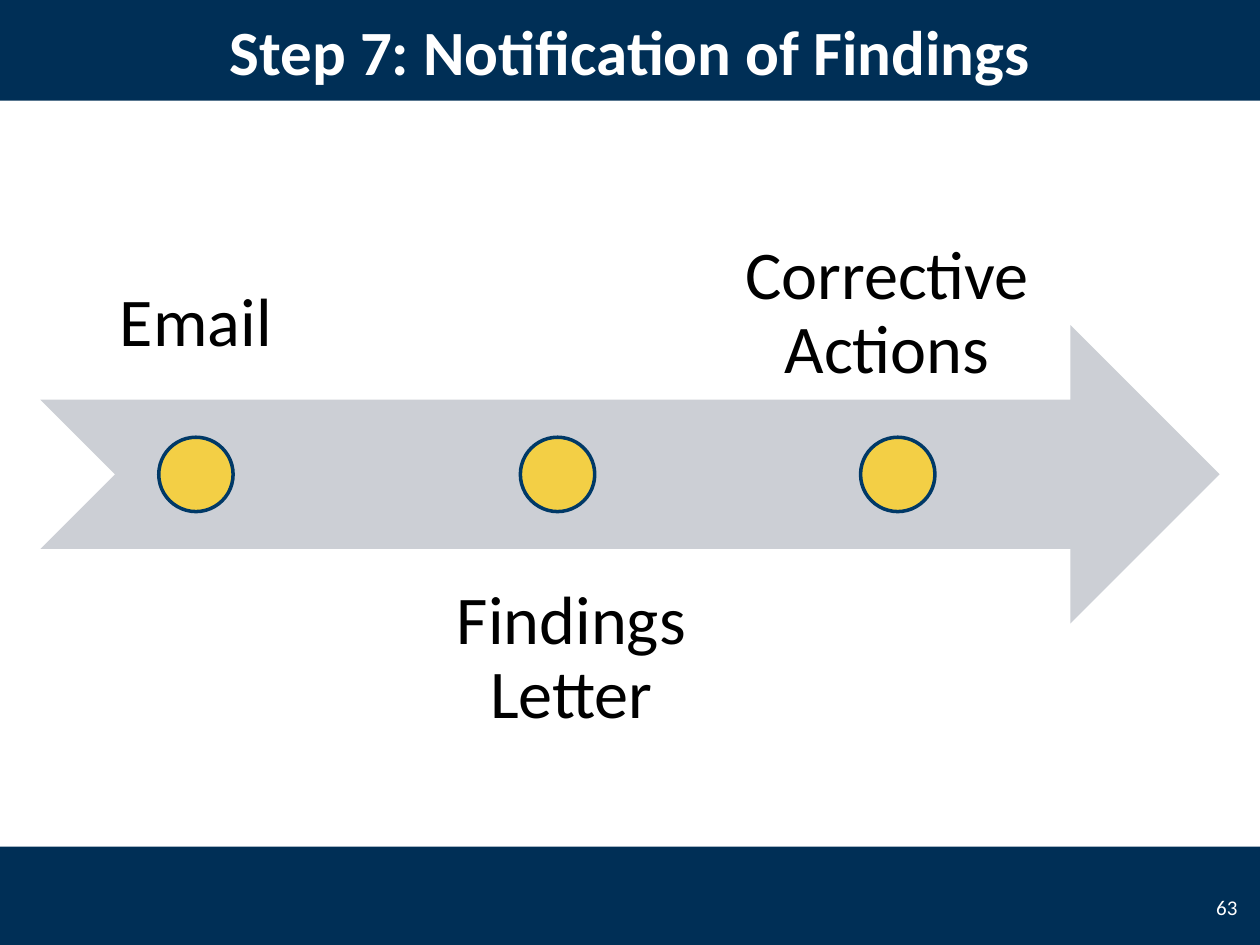
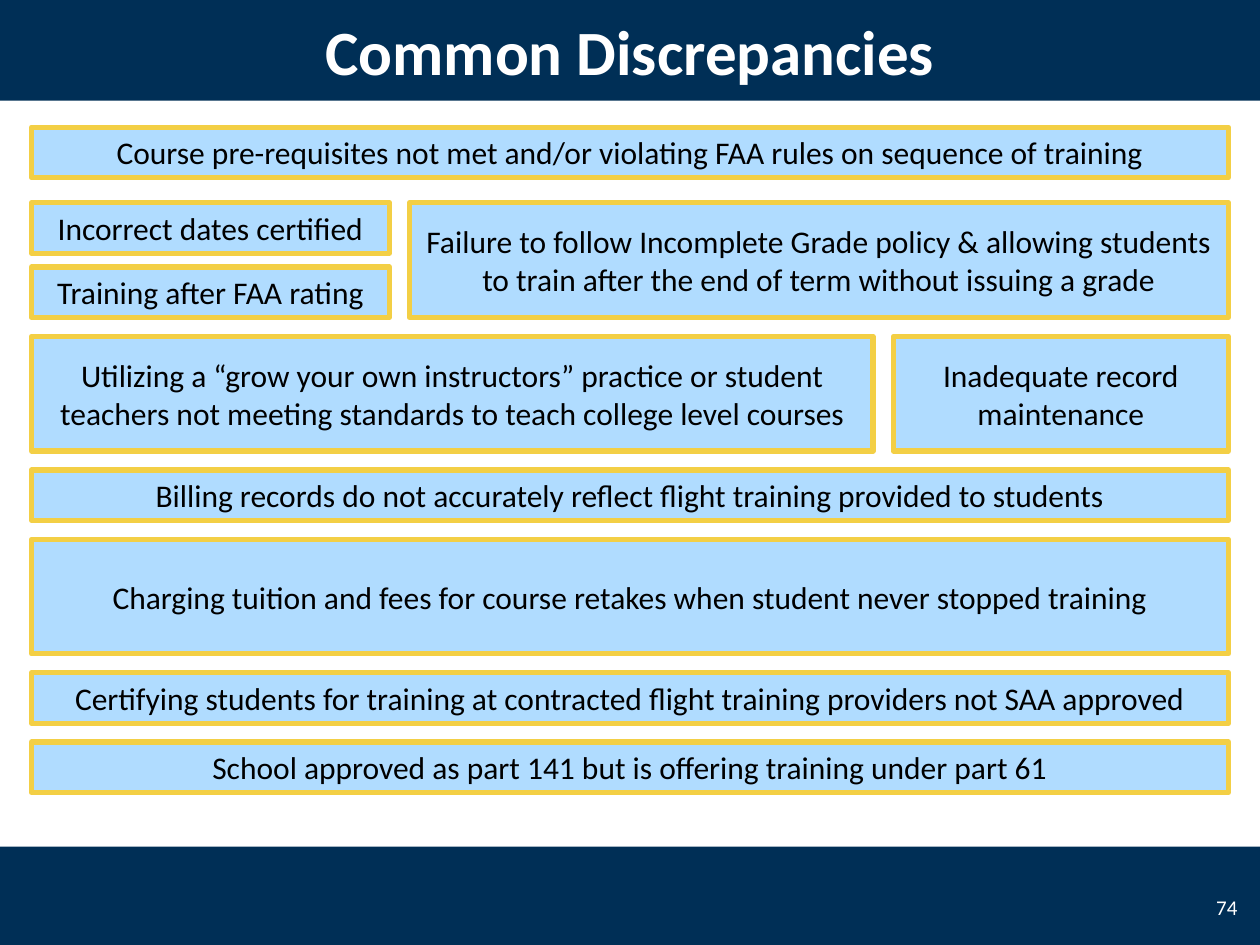
from dataclasses import dataclass
from pptx import Presentation
from pptx.dml.color import RGBColor
from pptx.enum.shapes import MSO_SHAPE
from pptx.enum.text import MSO_ANCHOR, MSO_AUTO_SIZE, PP_ALIGN
from pptx.util import Inches, Pt


@dataclass(frozen=True)
class Theme:
    font: str = "Calibri"
    navy: str = "002F56"
    outline: str = "003967"
    gold: str = "F3CF45"
    sky: str = "B0DCFF"
    grey: str = "CCCFD5"
    white: str = "FFFFFF"
    black: str = "000000"
    title_size: int = 36
    step_size: int = 39
    issue_size: int = 18
    number_size: int = 12


THEME = Theme()
WIDTH, HEIGHT = 10, 7.5
BAND_HEIGHT = 0.8
BAND_TOPS = (0, 6.72)

TIMELINE_TITLE, TIMELINE_NUMBER = "Step 7: Notification of Findings", "63"
ARROW = (0.32, 2.58, 9.36, 2.37)
DOT_SIZE = 0.59
LABEL_HEIGHT = 2.37
STEPS = [
    ("Email", (0.32, 0.8, 2.47), MSO_ANCHOR.BOTTOM, 1.26),
    ("Findings Letter", (3.3, 4.35, 2.47), MSO_ANCHOR.TOP, 4.13),
    ("Corrective Actions", (5.42, 1.01, 3.24), MSO_ANCHOR.BOTTOM, 6.83),
]

ISSUES_TITLE, ISSUES_NUMBER = "Common Discrepancies", "74"
MARGIN, COLUMN_GAP, ROW_GAP = 0.25, 0.16, 0.15
FIRST_ROW, SECOND_ROW = 1.01, 1.61
SHORT, TALL = 0.4, 0.91
LEAD_ISSUE = "Course pre-requisites not met and/or violating FAA rules on sequence of training"
ISSUE_ROWS = [
    (TALL, 2.84, [
        ["Incorrect dates certified", "Training after FAA rating"],
        ["Failure to follow Incomplete Grade policy & allowing students "
         "to train after the end of term without issuing a grade"],
    ]),
    (TALL, 6.68, [
        ["Utilizing a “grow your own instructors” practice or student "
         "teachers not meeting standards to teach college level courses"],
        ["Inadequate record maintenance"],
    ]),
    (SHORT, None, [["Billing records do not accurately reflect flight training provided to students"]]),
    (TALL, None, [["Charging tuition and fees for course retakes when student never stopped training"]]),
    (SHORT, None, [["Certifying students for training at contracted flight training providers not SAA approved"]]),
    (SHORT, None, [["School approved as part 141 but is offering training under part 61"]]),
]


def inches(*lengths):
    return [Inches(length) for length in lengths]


def colour(code):
    return RGBColor.from_string(code)


def write(holder, text, size, ink, align=PP_ALIGN.CENTER, anchor=MSO_ANCHOR.MIDDLE, bold=False):
    frame = holder.text_frame
    frame.word_wrap = True
    frame.auto_size = MSO_AUTO_SIZE.NONE
    frame.vertical_anchor = anchor
    paragraph = frame.paragraphs[0]
    paragraph.alignment = align
    run = paragraph.add_run()
    run.text = text
    run.font.name, run.font.size, run.font.bold = THEME.font, Pt(size), bold
    run.font.color.rgb = colour(ink)
    return frame


def draw(slide, kind, place, fill, line=None, weight=0):
    figure = slide.shapes.add_shape(kind, *inches(*place))
    figure.shadow.inherit = False
    figure.fill.solid()
    figure.fill.fore_color.rgb = colour(fill)
    if line:
        figure.line.color.rgb = colour(line)
        figure.line.width = Pt(weight)
    else:
        figure.line.fill.background()
    return figure


def prepare_layout(layout, slide):
    title = layout.placeholders[0]
    title.left, title.top, title.width, title.height = inches(0.5, 0, 9, BAND_HEIGHT)
    for offset, top in enumerate(BAND_TOPS):
        band = draw(slide, MSO_SHAPE.RECTANGLE, (0, top, WIDTH, BAND_HEIGHT), THEME.navy)
        band.element.nvSpPr.cNvPr.set("id", str(20 + offset))
        layout.shapes.element.insert(2, band.element)


def head(slide, title, number):
    write(slide.shapes.title, title, THEME.title_size, THEME.white, bold=True)
    page = slide.shapes.add_textbox(*inches(9.5, 7, 0.42, 0.4))
    write(page, number, THEME.number_size, THEME.white, PP_ALIGN.RIGHT)


def build_timeline(slide):
    head(slide, TIMELINE_TITLE, TIMELINE_NUMBER)
    draw(slide, MSO_SHAPE.NOTCHED_RIGHT_ARROW, ARROW, THEME.grey)
    dot_top = ARROW[1] + (ARROW[3] - DOT_SIZE) / 2
    for step, place, anchor, dot_left in STEPS:
        label = slide.shapes.add_textbox(*inches(*place, LABEL_HEIGHT))
        frame = write(label, step, THEME.step_size, THEME.black, anchor=anchor)
        frame.margin_left = frame.margin_right = Inches(0.3)
        frame.margin_top = frame.margin_bottom = Inches(0.3)
        frame.paragraphs[0].line_spacing = 0.9
        draw(slide, MSO_SHAPE.OVAL, (dot_left, dot_top, DOT_SIZE, DOT_SIZE),
             THEME.gold, THEME.outline, 2)


def add_issue(slide, issue, place):
    card = draw(slide, MSO_SHAPE.RECTANGLE, place, THEME.sky, THEME.gold, 3)
    write(card, issue, THEME.issue_size, THEME.black)


def build_issues(slide):
    head(slide, ISSUES_TITLE, ISSUES_NUMBER)
    full_width = WIDTH - 2 * MARGIN
    add_issue(slide, LEAD_ISSUE, (MARGIN, FIRST_ROW, full_width, SHORT))
    top = SECOND_ROW
    for height, first_width, columns in ISSUE_ROWS:
        left, width = MARGIN, first_width or full_width
        for stack in columns:
            card_height = height if len(stack) == 1 else SHORT
            for index, issue in enumerate(stack):
                card_top = top + index * (height - card_height)
                add_issue(slide, issue, (left, card_top, width, card_height))
            left += width + COLUMN_GAP
            width = WIDTH - MARGIN - left
        top += height + ROW_GAP


def main():
    deck = Presentation()
    deck.slide_width, deck.slide_height = inches(WIDTH, HEIGHT)
    layout = deck.slide_layouts[5]
    timeline, issues = [deck.slides.add_slide(layout) for _ in range(2)]
    prepare_layout(layout, timeline)
    build_timeline(timeline)
    build_issues(issues)
    deck.save("out.pptx")


if __name__ == "__main__":
    main()
